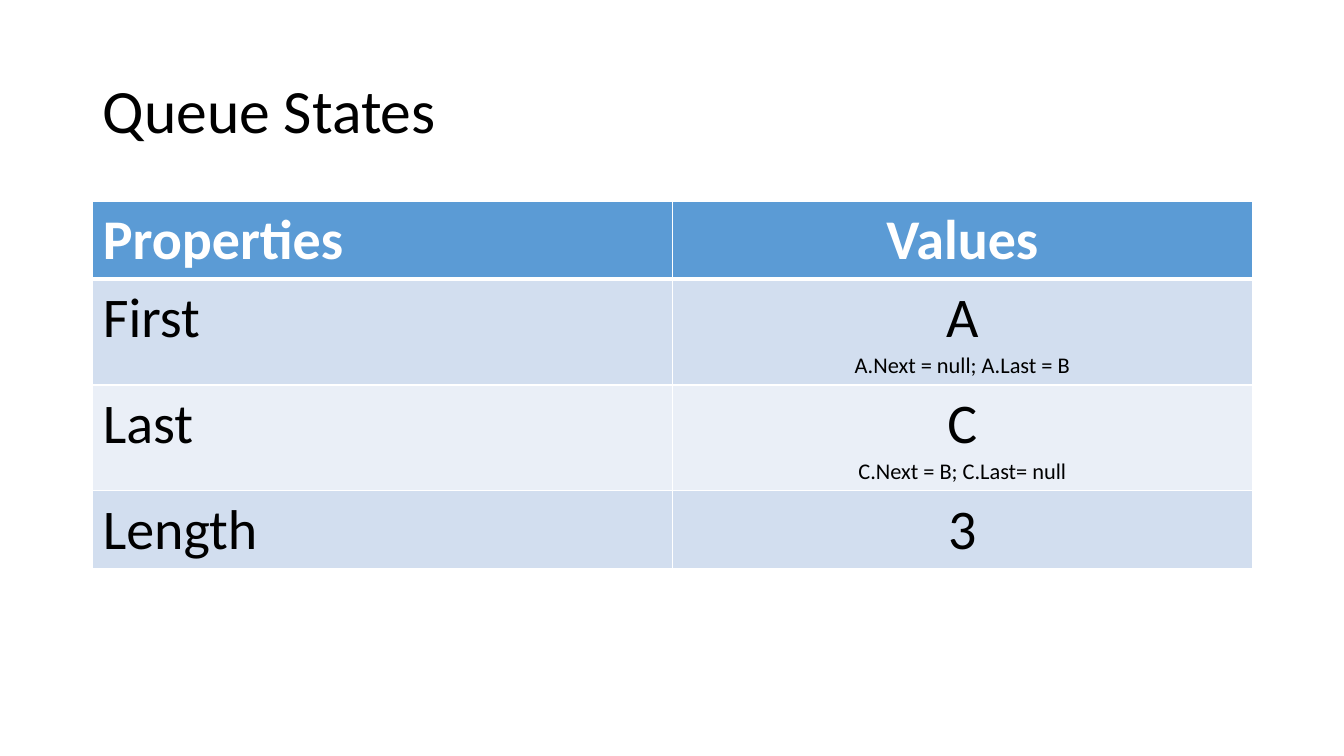
from lxml import etree
from pptx import Presentation
from pptx.dml.color import RGBColor
from pptx.enum import text
from pptx.oxml.ns import qn
from pptx.util import Inches, Pt

FONT = "Calibri"
HEADER_FILL = "5B9BD5"
BAND_FILLS = ("D2DEEF", "EAEFF7")
WHITE, BLACK = "FFFFFF", "000000"

# Property, value, detail shown below the value
QUEUE_ROWS = [
    ("Properties", "Values", None),
    ("First", "A", "A.Next = null; A.Last = B"),
    ("Last", "C", "C.Next = B; C.Last= null"),
    ("Length", "3", None),
]


def color(hex_string):
    return RGBColor.from_string(hex_string)


def write(paragraph, words, size=40, font_color=BLACK, bold=False,
          align=text.PP_ALIGN.LEFT, line_spacing=None):
    paragraph.alignment = align
    paragraph.line_spacing = line_spacing
    run = paragraph.add_run()
    run.text = words
    run.font.name = FONT
    run.font.size = Pt(size)
    run.font.bold = bold
    run.font.color.rgb = color(font_color)


def set_borders(cell, widths):
    """Draw white borders; widths maps a side (L, R, T, B) to points."""
    properties = cell._tc.get_or_add_tcPr()
    for position, (side, width) in enumerate(widths.items()):
        line = etree.Element(qn(f"a:ln{side}"), w=str(Pt(width)))
        fill = etree.SubElement(line, qn("a:solidFill"))
        etree.SubElement(fill, qn("a:srgbClr"), val=WHITE)
        properties.insert(position, line)


def add_title(slide, words):
    box = slide.shapes.add_textbox(Inches(0.92), Inches(0.4), Inches(11.5), Inches(1.45))
    frame = box.text_frame
    frame.word_wrap = True
    frame.vertical_anchor = text.MSO_ANCHOR.MIDDLE
    write(frame.paragraphs[0], words, size=44, line_spacing=0.9)


def fill_cell(cell, lines, row_index, align):
    """Write (words, size) lines and style the cell for its row."""
    is_header = row_index == 0
    cell.fill.solid()
    cell.fill.fore_color.rgb = color(
        HEADER_FILL if is_header else BAND_FILLS[(row_index - 1) % 2])
    set_borders(cell, {"L": 1, "R": 1, "T": 3 if row_index == 1 else 1,
                       "B": 3 if is_header else 1})
    frame = cell.text_frame
    for index, (words, size) in enumerate(lines):
        paragraph = frame.add_paragraph() if index else frame.paragraphs[0]
        write(paragraph, words, size=size, bold=is_header, align=align,
              font_color=WHITE if is_header else BLACK)


def add_queue_table(slide, rows):
    heights = [Inches(1.05 if detail else 0.77) for _, _, detail in rows]
    table = slide.shapes.add_table(len(rows), 2, Inches(0.92), Inches(2),
                                   Inches(11.5), sum(heights)).table
    for index, (name, value, detail) in enumerate(rows):
        table.rows[index].height = heights[index]
        value_lines = [(value, 40)] + ([(detail, 16)] if detail else [])
        fill_cell(table.cell(index, 0), [(name, 40)], index, text.PP_ALIGN.LEFT)
        fill_cell(table.cell(index, 1), value_lines, index, text.PP_ALIGN.CENTER)


def main():
    presentation = Presentation()
    presentation.slide_width = Inches(13.33)
    presentation.slide_height = Inches(7.5)
    slide = presentation.slides.add_slide(presentation.slide_layouts[6])
    add_title(slide, "Queue States")
    add_queue_table(slide, QUEUE_ROWS)
    presentation.save("out.pptx")


if __name__ == "__main__":
    main()
